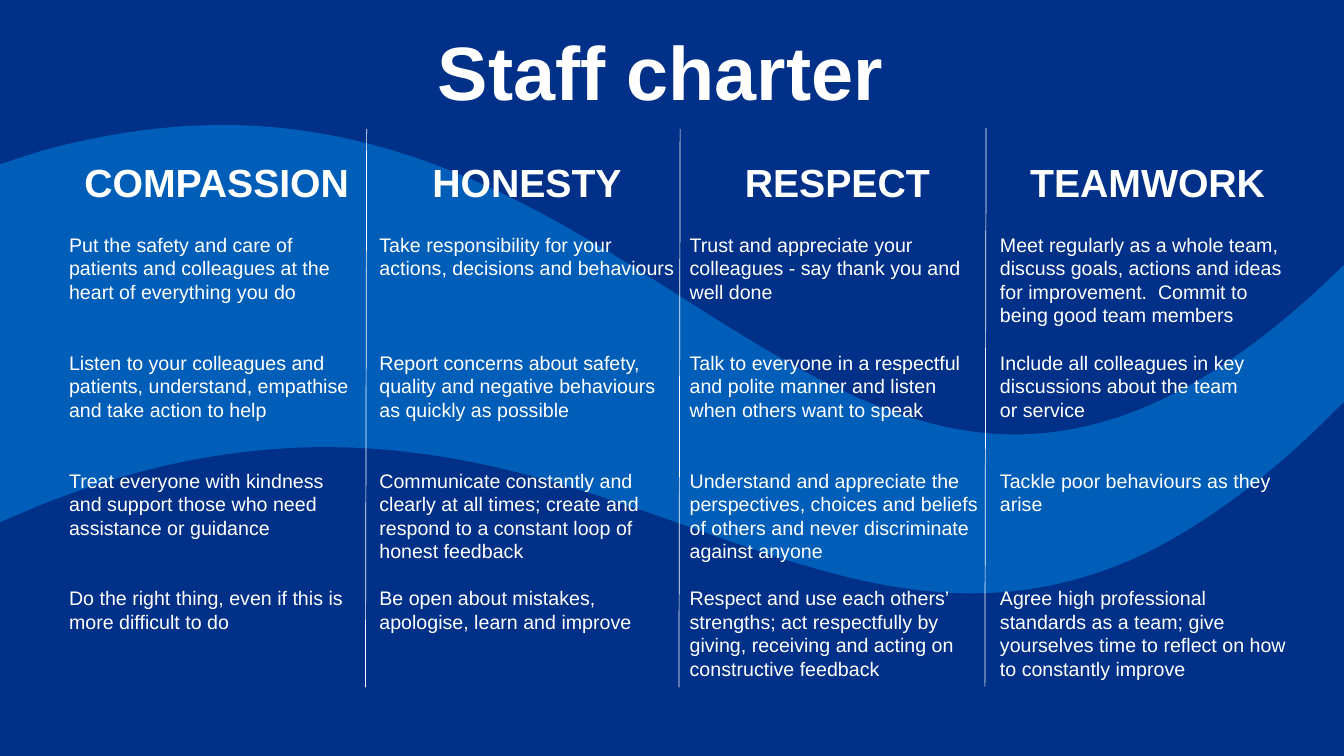
from typing import NamedTuple

from pptx import Presentation
from pptx.dml.color import RGBColor
from pptx.enum.shapes import MSO_CONNECTOR
from pptx.enum.text import MSO_ANCHOR, PP_ALIGN
from pptx.oxml.ns import qn
from pptx.util import Cm, Pt
from lxml import etree

NAVY = RGBColor(0x00, 0x30, 0x87)
BLUE = RGBColor(0x00, 0x5E, 0xB8)
WHITE = RGBColor(0xFF, 0xFF, 0xFF)
NO_GRID = "{2D5ABB26-0587-4C30-8999-92F81FD0307C}"

Point = tuple[float, float]


class Value(NamedTuple):
    name: str
    pledges: list[str]  # a line feed starts a new paragraph


class Rule(NamedTuple):
    start: Point
    end: Point


VALUES = [
    Value("COMPASSION", [
        "Put the safety and care of patients and colleagues at the heart of everything you do",
        "Listen to your colleagues and patients, understand, empathise and take action to help",
        "Treat everyone with kindness\nand support those who need assistance or guidance",
        "Do the right thing, even if this is more difficult to do",
    ]),
    Value("HONESTY", [
        "Take responsibility for your actions, decisions and behaviours",
        "Report concerns about safety, quality and negative behaviours as quickly as possible",
        "Communicate constantly and clearly at all times; create and respond to a constant "
        "loop of honest feedback",
        "Be open about mistakes, apologise, learn and improve",
    ]),
    Value("RESPECT", [
        "Trust and appreciate your colleagues - say thank you and well done",
        "Talk to everyone in a respectful and polite manner and listen when others want to speak",
        "Understand and appreciate the perspectives, choices and beliefs of others and never "
        "discriminate against anyone",
        "Respect and use each others’ strengths; act respectfully by giving, receiving and "
        "acting on constructive feedback",
    ]),
    Value("TEAMWORK", [
        "Meet regularly as a whole team, discuss goals, actions and ideas for improvement.  "
        "Commit to being good team members",
        "Include all colleagues in key discussions about the team\nor service",
        "Tackle poor behaviours as they arise",
        "Agree high professional standards as a team; give yourselves time to reflect on how "
        "to constantly improve",
    ]),
]

RULES = [
    Rule((9.24, 3.25), (9.21, 17.32)),
    Rule((17.14, 3.25), (17.11, 17.32)),
    Rule((24.85, 3.23), (24.82, 17.3)),
]

# Wave outline in cm: one point is a straight step, three are a Bezier curve
CREST = (5.64, 3.15)
DEPTH = Cm(11.79)
WAVE: list[list[Point]] = [
    [(15.65, 3.18), (20.5, 13.36), (28.47, 10.41)],
    [(30.05, 9.83), (31.75, 8.71), (33.63, 6.91)],
    [(33.87, 6.68)],
    [(33.87, 10.13)],
    [(33.83, 10.16)],
    [(32.08, 11.96), (30.43, 13.16), (28.91, 13.92)],
    [(20.02, 18.19), (13.97, 7.47), (0.89, 12.78)],
    [(0, 13.16)],
    [(0, 4.14)],
    [(1.02, 3.81)],
    [(2.69, 3.35), (4.22, 3.15), CREST],
]


def write(frame, text: str, size: int, bold: bool, align: PP_ALIGN, space: float) -> None:
    for i, line in enumerate(text.split("\n")):
        para = frame.paragraphs[0] if i == 0 else frame.add_paragraph()
        para.alignment = align
        para.line_spacing = space
        run = para.add_run()
        run.text = line
        run.font.name = "Arial"
        run.font.size = Pt(size)
        run.font.bold = bold
        run.font.color.rgb = WHITE


def add_wave(shapes) -> None:
    form = shapes.build_freeform(Cm(CREST[0]), Cm(CREST[1]))
    form.add_line_segments([(Cm(x), Cm(y)) for *_, (x, y) in WAVE], close=True)
    wave = form.convert_to_shape()
    wave.shadow.inherit = False
    wave.fill.solid()
    wave.fill.fore_color.rgb = BLUE
    wave.line.fill.background()

    # The trough dips below its end points
    wave.height = DEPTH
    track = wave._element.spPr.find(".//" + qn("a:path"))
    track.set("h", str(DEPTH))

    # Bend the steps that have control points
    for line, step in zip(track.findall(qn("a:lnTo")), WAVE):
        if len(step) == 1:
            continue
        for i, (x, y) in enumerate(step[:-1]):
            knob = etree.Element(qn("a:pt"), x=str(Cm(x) - wave.left), y=str(Cm(y) - wave.top))
            line.insert(i, knob)
        line.tag = qn("a:cubicBezTo")


def add_title(shapes) -> None:
    box = shapes.add_textbox(Cm(2.04), Cm(0.75), Cm(29.21), Cm(11.53))
    box.text_frame.word_wrap = True
    write(box.text_frame, "Staff charter", 54, True, PP_ALIGN.CENTER, 0.9)


def add_grid(shapes) -> None:
    rows = 1 + len(VALUES[0].pledges)
    frame = shapes.add_table(rows, len(VALUES), Cm(1.55), Cm(4.01), Cm(31.28), Cm(13.76))
    table = frame.table
    table.first_row = table.horz_banding = False
    table._tbl.tblPr.find(qn("a:tableStyleId")).text = NO_GRID
    for i, row in enumerate(table.rows):
        row.height = Cm(1.86 if i == 0 else 2.97)
    for j, value in enumerate(VALUES):
        table.columns[j].width = Cm(7.82)
        for i, text in enumerate([value.name, *value.pledges]):
            cell = table.cell(i, j)
            cell.fill.background()
            cell.vertical_anchor = MSO_ANCHOR.TOP
            cell.margin_left = cell.margin_right = Cm(0.19)
            cell.margin_top = cell.margin_bottom = 0
            head = i == 0
            write(cell.text_frame, text, 28 if head else 14, head,
                  PP_ALIGN.CENTER if head else PP_ALIGN.LEFT, 1.07)


def add_rule(shapes, rule: Rule) -> None:
    ends = [Cm(n) for n in (*rule.start, *rule.end)]
    line = shapes.add_connector(MSO_CONNECTOR.STRAIGHT, *ends)
    line.line.color.rgb = WHITE
    line.line.width = Pt(0.5)
    etree.SubElement(line._element.spPr, qn("a:effectLst"))


def main() -> None:
    deck = Presentation()
    deck.slide_width, deck.slide_height = Cm(33.87), Cm(19.05)
    slide = deck.slides.add_slide(deck.slide_layouts[6])

    # Background
    slide.background.fill.solid()
    slide.background.fill.fore_color.rgb = NAVY
    add_wave(slide.shapes)

    # Title and charter
    add_title(slide.shapes)
    add_grid(slide.shapes)

    # Column rules
    for rule in RULES:
        add_rule(slide.shapes, rule)

    deck.save("out.pptx")


if __name__ == "__main__":
    main()
